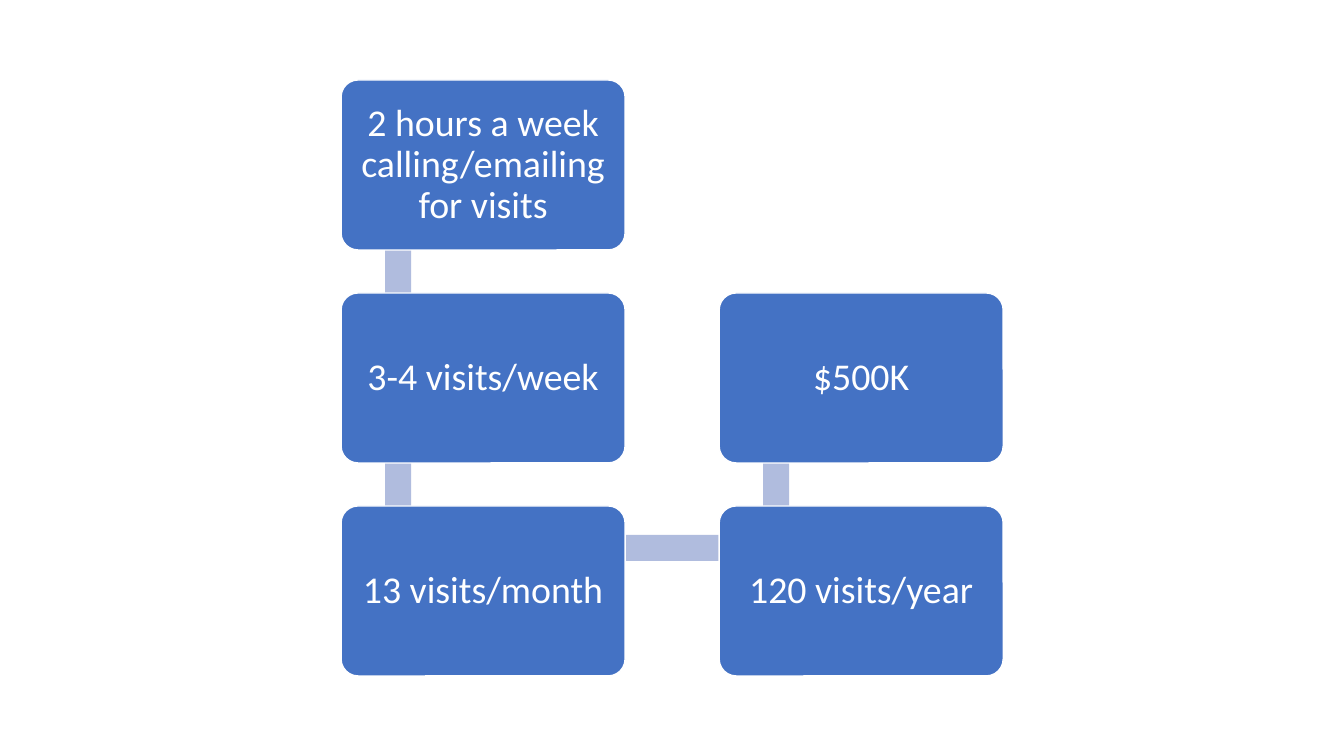
from pptx import Presentation, util as u
from pptx.dml.color import RGBColor
from pptx.enum import shapes, text

STEPS = [
    ("2 hours a week calling/emailing for visits", 0, 0),
    ("3-4 visits/week", 0, 1),
    ("13 visits/month", 0, 2),
    ("120 visits/year", 1, 2),
    ("$500K", 1, 1),
]
BLUE = RGBColor(0x44, 0x72, 0xC4)
PALE = RGBColor(0xB0, 0xBC, 0xDE)
WHITE = RGBColor(0xFF, 0xFF, 0xFF)
LEFT, TOP, PITCH_X, PITCH_Y = 341, 80, 378, 213
BOX_W, BOX_H = 284, 170
LINK_X, LINK_Y, LINK_W = 57, 42, 26
INSET = 11
FONT = {"name": "Calibri", "size": u.Pt(27)}


def px(n):
    return u.Emu(round(n * 914400 / 100.8))


def add_block(s, kind, box, fill):
    sp = s.shapes.add_shape(kind, *map(px, box))
    sp.shadow.inherit = False
    sp.fill.solid()
    sp.fill.fore_color.rgb = fill
    return sp


def add_link(s, start, end):
    (x1, x2), (y1, y2) = map(sorted, zip(start, end))
    x, y = x1 + LINK_X, y1 + LINK_Y
    half = LINK_W / 2
    if x1 == x2:
        box = (x - half, y, LINK_W, y2 - y1)
    else:
        box = (x, y - half, x2 - x1, LINK_W)
    add_block(s, shapes.MSO_SHAPE.RECTANGLE, box, PALE).line.fill.background()


def add_step(s, label, corner):
    sp = add_block(s, shapes.MSO_SHAPE.ROUNDED_RECTANGLE, (*corner, BOX_W, BOX_H), BLUE)
    sp.adjustments[0] = 0.1
    sp.line.color.rgb = WHITE
    sp.line.width = u.Pt(1)
    tf = sp.text_frame
    tf.word_wrap = True
    tf.vertical_anchor = text.MSO_ANCHOR.MIDDLE
    for side in ("left", "top", "right", "bottom"):
        setattr(tf, f"margin_{side}", px(INSET))
    p = tf.paragraphs[0]
    p.alignment = text.PP_ALIGN.CENTER
    p.line_spacing = 0.9
    r = p.add_run()
    r.text = label
    for key, value in FONT.items():
        setattr(r.font, key, value)
    r.font.color.rgb = WHITE


def main():
    prs = Presentation()
    prs.slide_width, prs.slide_height = u.Inches(13.33), u.Inches(7.5)
    s = prs.slides.add_slide(prs.slide_layouts[6])
    corners = [(LEFT + col * PITCH_X, TOP + row * PITCH_Y) for _, col, row in STEPS]
    for start, end in zip(corners, corners[1:]):
        add_link(s, start, end)
    for (label, _, _), corner in zip(STEPS, corners):
        add_step(s, label, corner)
    prs.save("out.pptx")


if __name__ == "__main__":
    main()
